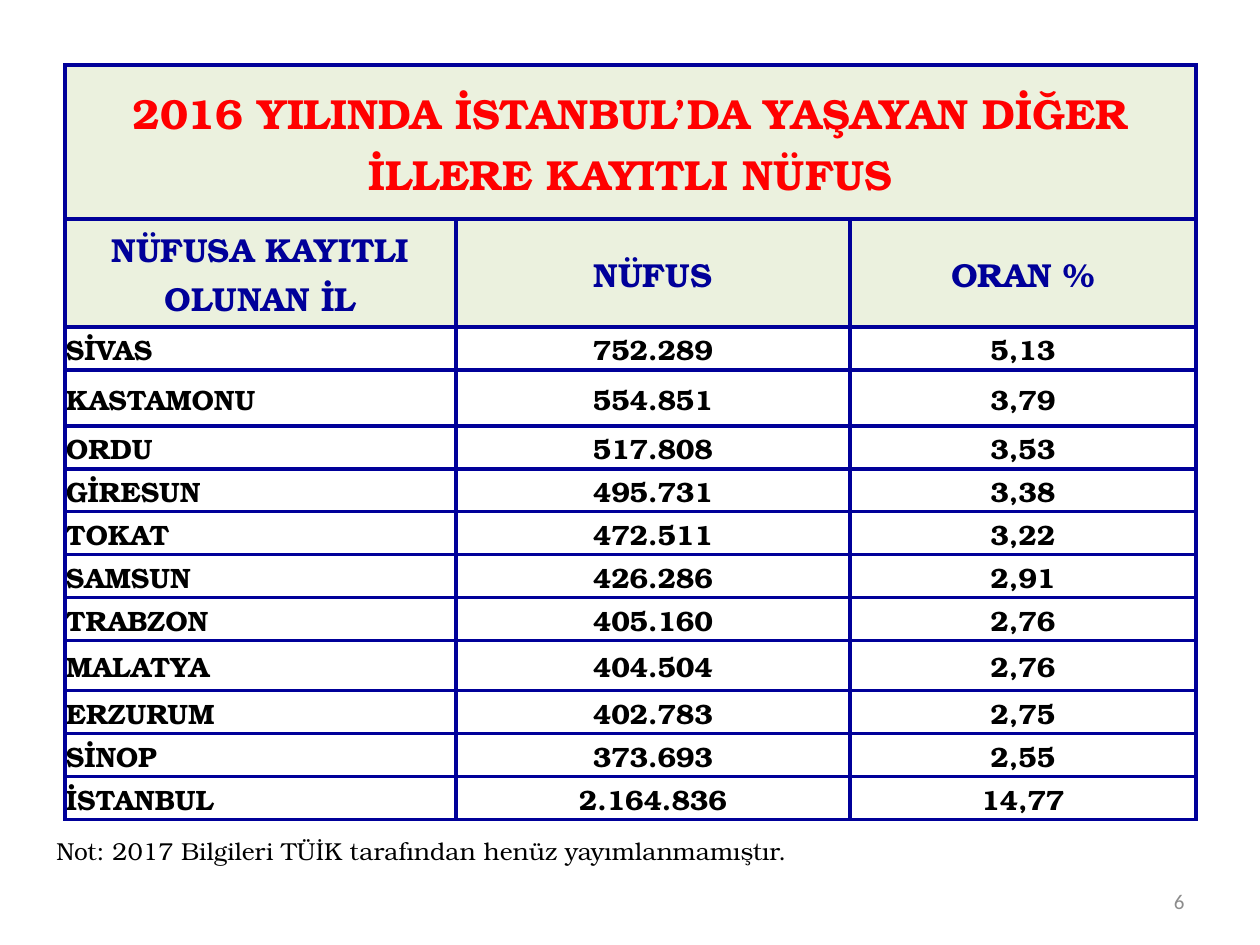
import pptx
import pptx.dml.color
import pptx.enum.text
import pptx.oxml
import pptx.oxml.ns
import pptx.util

PX = 914400 // 126
FONT = "TeX Gyre Bonum"
COLORS = {"navy": "000099", "red": "FF0000", "black": "000000",
          "gray": "8C8C8C", "header": "EBF1DE"}
ALIGN = pptx.enum.text.PP_ALIGN
MIDDLE = pptx.enum.text.MSO_ANCHOR.MIDDLE

TITLE = "2016 YILINDA İSTANBUL’DA YAŞAYAN DİĞER İLLERE KAYITLI NÜFUS"
HEADERS = ("NÜFUSA KAYITLI OLUNAN İL", "NÜFUS", "ORAN %")
PROVINCES = [
    ("SİVAS", "752.289", "5,13"),
    ("KASTAMONU", "554.851", "3,79"),
    ("ORDU", "517.808", "3,53"),
    ("GİRESUN", "495.731", "3,38"),
    ("TOKAT", "472.511", "3,22"),
    ("SAMSUN", "426.286", "2,91"),
    ("TRABZON", "405.160", "2,76"),
    ("MALATYA", "404.504", "2,76"),
    ("ERZURUM", "402.783", "2,75"),
    ("SİNOP", "373.693", "2,55"),
    ("İSTANBUL", "2.164.836", "14,77"),
]
COL_WIDTHS = (391, 394, 346)
TITLE_HEIGHT, HEADER_HEIGHT, ROW_HEIGHT = 154, 108, 43
TALL_ROWS = {"KASTAMONU": 56, "MALATYA": 50}


def px(n):
    return pptx.util.Emu(n * PX)


def write_text(tf, text, size, color="black", font=FONT, bold=False, align=ALIGN.LEFT):
    tf.word_wrap = True
    p = tf.paragraphs[0]
    p.alignment = align
    r = p.add_run()
    r.text = text
    r.font.size = pptx.util.Pt(size)
    r.font.name = font
    r.font.bold = bold
    r.font.color.rgb = pptx.dml.color.RGBColor.from_string(COLORS[color])


def add_borders(cell):
    tc_pr = cell._tc.get_or_add_tcPr()
    for side in ("lnL", "lnR", "lnT", "lnB"):
        tc_pr.append(pptx.oxml.parse_xml(
            f'<a:{side} {pptx.oxml.ns.nsdecls("a")} w="{pptx.util.Pt(2.25)}">'
            f'<a:solidFill><a:srgbClr val="{COLORS["navy"]}"/></a:solidFill></a:{side}>'))


def fill_cell(cell, text, size, margins, fill=None, **fmt):
    cell.vertical_anchor = MIDDLE
    (cell.margin_left, cell.margin_top,
     cell.margin_right, cell.margin_bottom) = map(px, margins)
    add_borders(cell)
    if fill:
        cell.fill.solid()
        cell.fill.fore_color.rgb = pptx.dml.color.RGBColor.from_string(COLORS[fill])
    else:
        cell.fill.background()
    if text:
        write_text(cell.text_frame, text, size, bold=True, **fmt)


def add_population_table(s, x, y):
    heights = [TITLE_HEIGHT, HEADER_HEIGHT]
    heights += [TALL_ROWS.get(row[0], ROW_HEIGHT) for row in PROVINCES]
    table = s.shapes.add_table(len(heights), len(COL_WIDTHS), px(x), px(y),
                               px(sum(COL_WIDTHS)), px(sum(heights))).table
    table.first_row = table.horz_banding = False
    for col, width in zip(table.columns, COL_WIDTHS):
        col.width = px(width)
    for row, height in zip(table.rows, heights):
        row.height = px(height)

    # Title row across all columns, then column headings
    head = {"margins": (11, 5, 11, 5), "fill": "header", "align": ALIGN.CENTER}
    table.cell(0, 0).merge(table.cell(0, len(COL_WIDTHS) - 1))
    for c, heading in enumerate(HEADERS):
        fill_cell(table.cell(0, c), TITLE if c == 0 else "", 24, color="red", **head)
        fill_cell(table.cell(1, c), heading, 19, color="navy", **head)

    # One row for each province
    for r, values in enumerate(PROVINCES, start=2):
        for c, value in enumerate(values):
            fill_cell(table.cell(r, c), value, 16, (1, 1, 1, 0),
                      align=ALIGN.CENTER if c else ALIGN.LEFT)


def add_label(s, x, y, w, h, text, size, anchor=pptx.enum.text.MSO_ANCHOR.TOP, **fmt):
    tf = s.shapes.add_textbox(px(x), px(y), px(w), px(h)).text_frame
    tf.vertical_anchor = anchor
    write_text(tf, text, size, **fmt)


def main():
    prs = pptx.Presentation()
    prs.slide_width, prs.slide_height = pptx.util.Inches(10), pptx.util.Inches(7.5)
    s = prs.slides.add_slide(prs.slide_layouts[6])
    add_population_table(s, 65, 65)
    # Slide number and footnote
    add_label(s, 903, 876, 294, 50, "6", 12, anchor=MIDDLE, font="Calibri",
              color="gray", align=ALIGN.RIGHT)
    add_label(s, 44, 830, 1071, 43,
              "Not: 2017 Bilgileri TÜİK tarafından henüz yayımlanmamıştır.", 14)
    prs.save("out.pptx")


if __name__ == "__main__":
    main()
